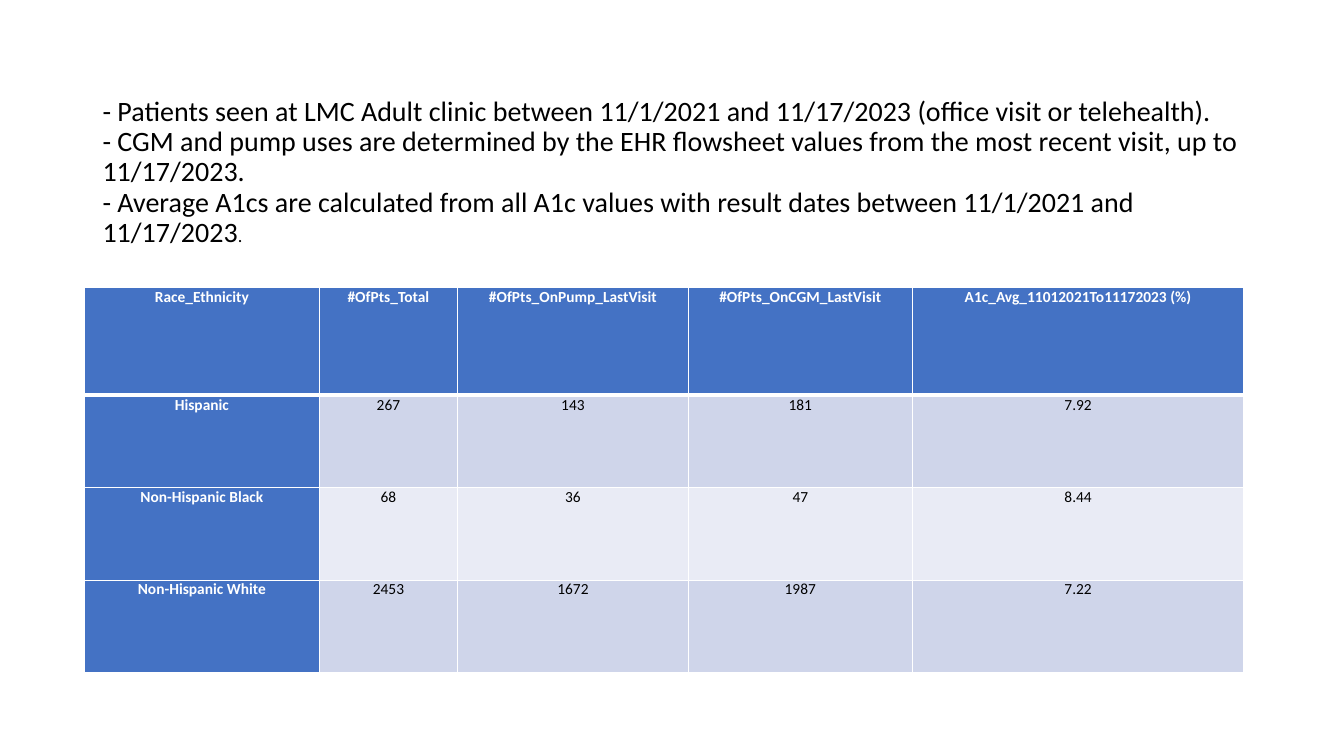
import copy
import dataclasses

import lxml.etree
import pptx
import pptx.dml.color
import pptx.enum.text
import pptx.oxml.ns
import pptx.util

Cm = pptx.util.Cm
Pt = pptx.util.Pt
qn = pptx.oxml.ns.qn


@dataclasses.dataclass(frozen=True)
class Theme:
    """Colours, type face and type sizes of the slide."""
    font: str = "Calibri"
    text: str = "000000"
    light: str = "FFFFFF"
    accent: str = "4472C4"
    bands: tuple = ("CFD5EA", "E9EBF5")
    title_size: int = 20
    stop_size: int = 13
    table_size: int = 11
    border: int = 1
    header_border: int = 3


THEME = Theme()
NOTES = [
    "- Patients seen at LMC Adult clinic between 11/1/2021 and 11/17/2023 (office visit or telehealth).",
    "- CGM and pump uses are determined by the EHR flowsheet values from the most recent visit, up to 11/17/2023.",
    "- Average A1cs are calculated from all A1c values with result dates between 11/1/2021 and 11/17/2023",
]
PATIENT_ROWS = [
    ["Race_Ethnicity", "#OfPts_Total", "#OfPts_OnPump_LastVisit",
     "#OfPts_OnCGM_LastVisit", "A1c_Avg_11012021To11172023 (%)"],
    ["Hispanic", "267", "143", "181", "7.92"],
    ["Non-Hispanic Black", "68", "36", "47", "8.44"],
    ["Non-Hispanic White", "2453", "1672", "1987", "7.22"],
]
COLUMN_WIDTHS = [5.92, 3.48, 5.82, 5.64, 8.36]
HEADER_HEIGHT, ROW_HEIGHT = 2.72, 2.33


def apply_format(target, values):
    """Set each attribute named in a dict of format values."""
    for name, value in values.items():
        setattr(target, name, value)


def add_span(para, text, size, color, bold=False):
    """Add a formatted run to a paragraph."""
    span = para.add_run()
    span.text = text
    apply_format(span.font, {"name": THEME.font, "size": Pt(size), "bold": bold})
    span.font.color.rgb = pptx.dml.color.RGBColor.from_string(color)
    return span


def fill_title(box):
    """Place the title and write the notes on separate lines."""
    apply_format(box, {"left": Cm(2.33), "top": Cm(1.65),
                       "width": Cm(29.21), "height": Cm(5.41)})
    apply_format(box.text_frame, {
        "word_wrap": True,
        "auto_size": pptx.enum.text.MSO_AUTO_SIZE.NONE,
        "vertical_anchor": pptx.enum.text.MSO_ANCHOR.MIDDLE})
    para = box.text_frame.paragraphs[0]
    apply_format(para, {"alignment": pptx.enum.text.PP_ALIGN.LEFT, "line_spacing": 0.9})
    for index, note in enumerate(NOTES):
        if index:
            para.add_line_break()
        span = add_span(para, note, THEME.title_size, THEME.text)
    for line_break in para._p.findall(qn("a:br")):
        line_break.append(copy.deepcopy(span._r.rPr))
    add_span(para, ".", THEME.stop_size, THEME.text)


def set_borders(cell, top, bottom):
    """Draw light borders on the four sides of a cell."""
    sides = {"L": THEME.border, "R": THEME.border, "T": top, "B": bottom}
    properties = cell._tc.get_or_add_tcPr()
    for index, (side, width) in enumerate(sides.items()):
        line = lxml.etree.Element(qn(f"a:ln{side}"), w=str(Pt(width)))
        fill = lxml.etree.SubElement(line, qn("a:solidFill"))
        lxml.etree.SubElement(fill, qn("a:srgbClr"), val=THEME.light)
        properties.insert(index, line)


def fill_cell(cell, text, row, column):
    """Write and colour one cell according to its place in the table."""
    heading = row == 0 or column == 0
    apply_format(cell, {"margin_left": Cm(0.18), "margin_right": Cm(0.18),
                        "margin_top": 0, "margin_bottom": 0,
                        "vertical_anchor": pptx.enum.text.MSO_ANCHOR.TOP})
    cell.fill.solid()
    color = THEME.accent if heading else THEME.bands[(row - 1) % 2]
    cell.fill.fore_color.rgb = pptx.dml.color.RGBColor.from_string(color)
    para = cell.text_frame.paragraphs[0]
    para.alignment = pptx.enum.text.PP_ALIGN.CENTER
    add_span(para, text, THEME.table_size, THEME.light if heading else THEME.text, heading)
    set_borders(cell, THEME.header_border if row == 1 else THEME.border,
                THEME.header_border if row == 0 else THEME.border)


def add_patient_table(page):
    """Add the table of patients by race and ethnicity."""
    heights = [HEADER_HEIGHT] + [ROW_HEIGHT] * (len(PATIENT_ROWS) - 1)
    table = page.shapes.add_table(
        len(heights), len(COLUMN_WIDTHS), Cm(2.13), Cm(7.24),
        Cm(sum(COLUMN_WIDTHS)), Cm(sum(heights))).table
    table.first_col = True
    for column, width in zip(table.columns, COLUMN_WIDTHS):
        column.width = Cm(width)
    for row, height in zip(table.rows, heights):
        row.height = Cm(height)
    for row, texts in enumerate(PATIENT_ROWS):
        for column, text in enumerate(texts):
            fill_cell(table.cell(row, column), text, row, column)


def main():
    """Build the slide and save the deck."""
    deck = pptx.Presentation()
    apply_format(deck, {"slide_width": Cm(33.87), "slide_height": Cm(19.05)})
    page = deck.slides.add_slide(deck.slide_layouts.get_by_name("Title Only"))
    fill_title(page.shapes.title)
    add_patient_table(page)
    deck.save("out.pptx")


if __name__ == "__main__":
    main()
